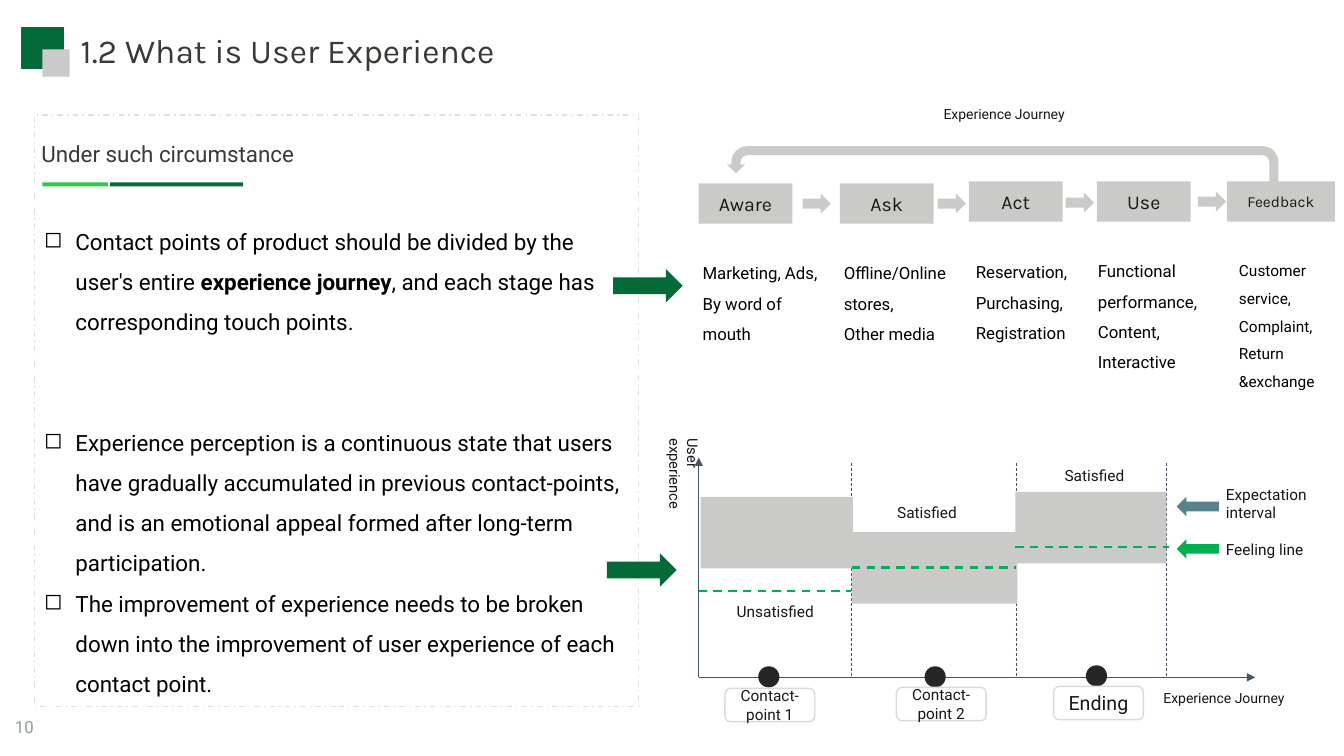
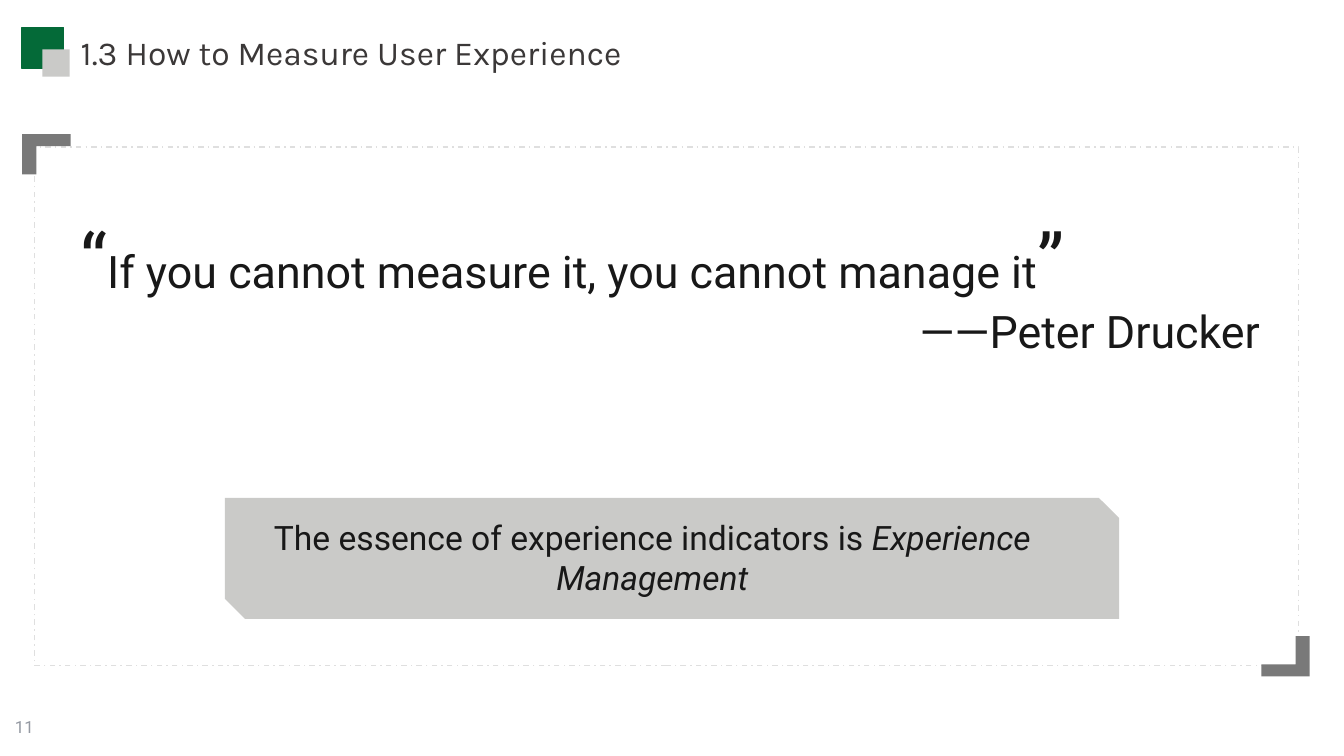
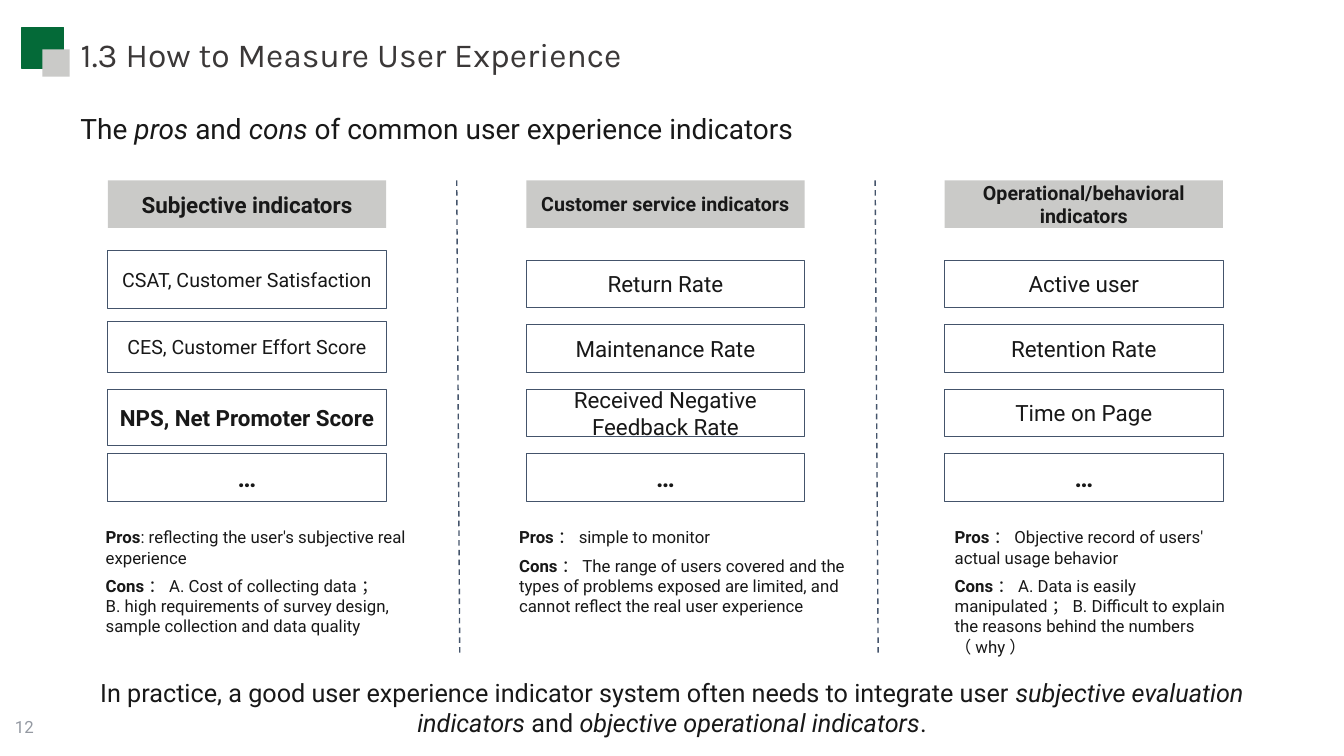
from lxml.etree import SubElement
from pptx import Presentation
from pptx.dml.color import RGBColor
from pptx.enum.dml import MSO_LINE
from pptx.enum.shapes import MSO_CONNECTOR, MSO_SHAPE
from pptx.enum.text import MSO_ANCHOR, MSO_AUTO_SIZE, PP_ALIGN
from pptx.oxml.ns import qn
from pptx.util import Emu, Pt

PX = 9144

GREEN = RGBColor(0x04, 0x6A, 0x38)
LIGHT_GREEN = RGBColor(0x2D, 0xC8, 0x4D)
LINE_GREEN = RGBColor(0x00, 0xB0, 0x50)
TEAL = RGBColor(0x56, 0x82, 0x8B)
SILVER = RGBColor(0xCA, 0xCA, 0xC8)
PALE = RGBColor(0xDF, 0xDF, 0xDF)
TAG_EDGE = RGBColor(0xDA, 0xDA, 0xDA)
CORNER_GRAY = RGBColor(0x79, 0x79, 0x79)
NUMBER_GRAY = RGBColor(0x94, 0x99, 0xA2)
SLATE = RGBColor(0x44, 0x54, 0x6B)
CHARCOAL = RGBColor(0x3B, 0x38, 0x38)
DOT = RGBColor(0x26, 0x26, 0x26)
INK = RGBColor(0x18, 0x18, 0x18)
BLACK = RGBColor(0x00, 0x00, 0x00)

TITLE_FONT, BODY_FONT = "Karla", "Roboto"
CENTER, RIGHT = PP_ALIGN.CENTER, PP_ALIGN.RIGHT
BOLD, ITALIC = {"bold": True}, {"italic": True}
FRAME_EDGE = (PALE, 1, MSO_LINE.DASH_DOT)

POINTS = [
    ["Contact points of product should be divided by the user's entire ",
     ("experience journey", BOLD),
     ", and each stage has corresponding touch points."],
    ["Experience perception is a continuous state that users have gradually "
     "accumulated in previous contact-points, and is an emotional appeal "
     "formed after long-term participation."],
    ["The improvement of experience needs to be broken down into the "
     "improvement of user experience of each contact point."],
]
POINT_GAPS = [0, 57, 0]

STAGES = [
    ("Aware", (693, 182, 93, 40), 14, (687, 246, 138, 159), 12,
     ["Marketing, Ads,", "By word of mouth"]),
    ("Ask", (833, 182, 93, 40), 14, (827, 246, 138, 148), 12,
     ["Offline/Online stores,", "Other media"]),
    ("Act", (961, 180, 93, 40), 14, (958, 245, 138, 98), 12,
     ["Reservation,", "Purchasing,", "Registration"]),
    ("Use", (1088, 180, 93, 40), 14, (1079, 244, 138, 128), 12,
     ["Functional performance,", "Content,", "Interactive"]),
    ("Feedback", (1217, 180, 107, 40), 11, (1219, 245, 117, 202), 11,
     ["Customer service,", "Complaint,", "Return &exchange"]),
]
STAGE_ARROWS = [(796, 192), (930, 192), (1057, 191), (1188, 190)]
POINT_ARROWS = [(608, 267), (602, 549)]

CONTACTS = [
    {"name": "Contact-point 1", "size": 11, "tag": (719, 683), "dot": (752, 661),
     "band": (695, 493, 151, 71), "feeling": (693, 844, 586), "edge": 844,
     "mood": "Unsatisfied", "mood_place": (712, 592, 114, 29)},
    {"name": "Contact-point 2", "size": 11, "tag": (889, 682), "dot": (917, 661),
     "band": (845, 528, 164, 71), "feeling": (845, 1008, 563), "edge": 1008,
     "mood": "Satisfied", "mood_place": (873, 494, 93, 29)},
    {"name": "Ending", "size": 14, "tag": (1045, 681), "dot": (1077, 660),
     "band": (1007, 488, 150, 71), "feeling": (1007, 1159, 543), "edge": 1157,
     "mood": "Satisfied", "mood_place": (1039, 457, 93, 29)},
]
LEGEND = [
    (TEAL, 493, ["Expectation", "interval"], (1206, 476, 127, 47)),
    (LINE_GREEN, 535, ["Feeling line"], (1206, 531, 113, 29)),
]
JOURNEY_LABELS = [(926, 100, 194, 28), (1144, 679, 194, 28)]

QUOTE = [
    [("“", {"size": 54}), "If you cannot measure it, you cannot manage it",
     ("”", {"size": 54})],
    ["——Peter Drucker"],
]
ESSENCE = [["The essence of experience indicators is ",
            ("Experience Management", ITALIC)]]
CORNER = [(0, 0), (48, 0), (48, 12), (14, 12), (14, 40), (0, 40)]

SUBTITLE = [["The ", ("pros", ITALIC), " and ", ("cons", ITALIC),
             " of common user experience indicators"]]
CONCLUSION = [[
    "In practice, a good user experience indicator system often needs to "
    "integrate user ",
    ("subjective evaluation indicators ", ITALIC), "and ",
    ("objective operational indicators", ITALIC), "."]]
MORE = ("…", 18, True)
EVEN_ROWS = [(258 + 64 * row, 47) for row in range(4)]
INDICATORS = [
    {"heading": ("Subjective indicators", 16),
     "items": [("CSAT, Customer Satisfaction", 14, False),
               ("CES, Customer Effort Score", 14, False),
               ("NPS, Net Promoter Score", 16, True), MORE],
     "rows": [(248, 58), (319, 50), (386, 56), (450, 47)],
     "notes_place": (95, 518, 344, 154),
     "notes": [[("Pros", BOLD), ": reflecting the user's subjective real experience"],
               [("Cons", BOLD), "：A. Cost of collecting data；"],
               ["B. high requirements of survey design, sample collection "
                "and data quality"]]},
    {"heading": ("Customer service indicators", 14),
     "items": [("Return Rate", 16, False), ("Maintenance Rate", 16, False),
               ("Received Negative Feedback Rate", 16, False), MORE],
     "rows": EVEN_ROWS,
     "notes_place": (505, 518, 348, 130),
     "notes": [[("Pros", BOLD), "：simple to monitor"],
               [("Cons", BOLD), "：The range of users covered and the types of "
                "problems exposed are limited, and cannot reflect the real "
                "user experience"]]},
    {"heading": ("Operational/behavioral indicators", 14),
     "items": [("Active user", 16, False), ("Retention Rate", 16, False),
               ("Time on Page", 16, False), MORE],
     "rows": EVEN_ROWS,
     "notes_place": (937, 518, 288, 130),
     "notes": [[("Pros", BOLD), "：Objective record of users' actual usage behavior"],
               [("Cons", BOLD), "：A. Data is easily manipulated；B. Difficult to "
                "explain the reasons behind the numbers （why）"]]},
]
COLUMN_LEFT, COLUMN_STEP, COLUMN_WIDTH = 107, 415, 276


def to_emu(lengths):
    return [Emu(length * PX) for length in lengths]


def add_bullet(para):
    properties = para._p.get_or_add_pPr()
    properties.set("marL", str(31 * PX))
    properties.set("indent", str(-31 * PX))
    SubElement(properties, qn("a:buChar")).set("char", "◻")


def write(frame, paras, size, color=INK, font=BODY_FONT, align=PP_ALIGN.LEFT,
          spacing=None, anchor=MSO_ANCHOR.TOP, insets=(10, 5, 10, 5),
          wrap=True, bold=False, bulleted=False):
    frame.word_wrap = wrap
    frame.auto_size = MSO_AUTO_SIZE.NONE
    frame.vertical_anchor = anchor
    (frame.margin_left, frame.margin_top,
     frame.margin_right, frame.margin_bottom) = to_emu(insets)
    for index, spans in enumerate(paras):
        para = frame.add_paragraph() if index else frame.paragraphs[0]
        if bulleted:
            add_bullet(para)
        para.alignment = align
        if spacing:
            para.line_spacing = spacing
        for span in [spans] if isinstance(spans, str) else spans:
            text, style = (span, {}) if isinstance(span, str) else span
            run = para.add_run()
            run.text = text
            run.font.name = font
            run.font.size = Pt(style.get("size", size))
            run.font.color.rgb = color
            run.font.bold = style.get("bold", bold)
            run.font.italic = style.get("italic", False)


def add_text(page, place, paras, size, **style):
    box = page.shapes.add_textbox(*to_emu(place))
    write(box.text_frame, paras, size, **style)
    return box.text_frame


def set_line(line, color, width, dash=None):
    line.color.rgb = color
    line.width = Pt(width)
    if dash:
        line.dash_style = dash


def paint(shape, fill=None, outline=None):
    shape.shadow.inherit = False
    if fill is None:
        shape.fill.background()
    else:
        shape.fill.solid()
        shape.fill.fore_color.rgb = fill
    if outline:
        set_line(shape.line, *outline)
    else:
        shape.line.fill.background()


def add_box(page, place, fill=None, outline=None, kind=MSO_SHAPE.RECTANGLE):
    box = page.shapes.add_shape(kind, *to_emu(place))
    paint(box, fill, outline)
    return box


def add_label_box(page, place, label, size, fill=None, outline=None,
                  kind=MSO_SHAPE.RECTANGLE, **style):
    box = add_box(page, place, fill, outline, kind)
    write(box.text_frame, [label], size, align=CENTER,
          anchor=MSO_ANCHOR.MIDDLE, **style)


def add_line(page, ends, color, width, dash=None, arrow=False):
    connector = page.shapes.add_connector(MSO_CONNECTOR.STRAIGHT, *to_emu(ends))
    set_line(connector.line, color, width, dash)
    if arrow:
        SubElement(connector.line._get_or_add_ln(),
                   qn("a:tailEnd")).set("type", "triangle")
    SubElement(connector._element.spPr, qn("a:effectLst"))


def add_page(deck, title, title_place, number):
    page = deck.slides.add_slide(deck.slide_layouts[5])
    heading = page.shapes.title
    heading.left, heading.top, heading.width, heading.height = to_emu(title_place)
    write(heading.text_frame, [title], 24, CHARCOAL, TITLE_FONT)
    add_box(page, (22, 27, 41, 41), GREEN, (GREEN, 1))
    add_box(page, (42, 49, 27, 27), SILVER)
    add_text(page, (5, 701, 300, 40), [number], 12, color=NUMBER_GRAY,
             anchor=MSO_ANCHOR.MIDDLE)
    return page


def add_points(page):
    add_text(page, (34, 135, 317, 34), ["Under such circumstance"], 16,
             color=CHARCOAL, insets=(7, 4, 7, 4), wrap=False)
    add_box(page, (42, 181, 65, 4), LIGHT_GREEN)
    add_box(page, (109, 181, 132, 4), GREEN)
    add_box(page, (34, 114, 599, 587), outline=FRAME_EDGE)
    frame = add_text(page, (34, 208, 599, 491), POINTS, 16, color=BLACK,
                     spacing=1.5, bulleted=True)
    for para, gap in zip(frame.paragraphs, POINT_GAPS):
        para.space_before = Pt(gap)
    for left, top in POINT_ARROWS:
        add_box(page, (left, top, 69, 33), GREEN, kind=MSO_SHAPE.RIGHT_ARROW)


def add_journey(page):
    for name, place, size, notes_place, notes_size, notes in STAGES:
        add_label_box(page, place, name, size, SILVER, font=TITLE_FONT)
        add_text(page, notes_place, notes, notes_size, color=BLACK, spacing=1.5)
    for left, top in STAGE_ARROWS:
        add_box(page, (left, top, 28, 20), SILVER, kind=MSO_SHAPE.RIGHT_ARROW)
    loop = add_box(page, (721, 145, 547, 36), SILVER, kind=MSO_SHAPE.U_TURN_ARROW)
    loop._element.spPr.xfrm.set("flipH", "1")
    for place in JOURNEY_LABELS:
        add_text(page, place, ["Experience Journey"], 10)


def add_experience_graph(page):
    for end in [(693, 454), (1245, 672)]:
        add_line(page, (693, 672, *end), SLATE, 0.5, arrow=True)
    axis_label = add_text(page, (645, 425, 56, 106), ["User experience"], 10.5)
    axis_label._txBody.bodyPr.set("vert", "eaVert")
    for contact in CONTACTS:
        edge = contact["edge"]
        add_line(page, (edge, 459, edge, 671), SLATE, 0.5, MSO_LINE.DASH)
    for contact in CONTACTS:
        add_box(page, contact["band"], SILVER)
        start, end, level = contact["feeling"]
        add_line(page, (start, level, end, level), LINE_GREEN, 1.5, MSO_LINE.DASH)
        add_box(page, (*contact["dot"], 21, 21), DOT,
                kind=MSO_SHAPE.FLOWCHART_CONNECTOR)
        add_label_box(page, (*contact["tag"], 89, 33), contact["name"],
                      contact["size"], outline=(TAG_EDGE, 1),
                      kind=MSO_SHAPE.ROUNDED_RECTANGLE, insets=(0, 0, 0, 0))
        add_text(page, contact["mood_place"], [contact["mood"]], 11, align=CENTER)
    for color, top, label, place in LEGEND:
        pointer = add_box(page, (1167, top, 42, 19), color,
                          kind=MSO_SHAPE.RIGHT_ARROW)
        pointer.rotation = 180
        add_text(page, place, label, 11)


def add_corner(page, left, top, rotation):
    points = [(left + x, top + y) for x, y in CORNER]
    builder = page.shapes.build_freeform(*points[0], scale=PX)
    builder.add_line_segments(points[1:], close=True)
    corner = builder.convert_to_shape()
    paint(corner, CORNER_GRAY)
    corner.rotation = rotation


def add_quote(page):
    add_box(page, (223, 494, 887, 120), SILVER,
            kind=MSO_SHAPE.SNIP_2_DIAG_RECTANGLE)
    add_box(page, (34, 146, 1254, 514), outline=FRAME_EDGE)
    frame = add_text(page, (70, 206, 1190, 155), QUOTE, 32)
    frame.paragraphs[1].alignment = RIGHT
    add_text(page, (247, 508, 800, 91), ESSENCE, 24, align=CENTER)
    add_corner(page, 22, 133, 0)
    add_corner(page, 1251, 631, 180)


def add_indicators(page):
    add_text(page, (70, 106, 1034, 44), SUBTITLE, 20)
    for index, column in enumerate(INDICATORS):
        left = COLUMN_LEFT + COLUMN_STEP * index
        if index:
            add_line(page, (left - 69, 179, left - 66, 651), SLATE, 1, MSO_LINE.DASH)
        heading, size = column["heading"]
        add_label_box(page, (left, 179, COLUMN_WIDTH, 47), heading, size,
                      SILVER, bold=True)
        for (label, size, bold), (top, height) in zip(column["items"], column["rows"]):
            add_label_box(page, (left, top, COLUMN_WIDTH, height), label, size,
                          outline=(SLATE, 0.5), bold=bold)
        frame = add_text(page, column["notes_place"], column["notes"], 12)
        frame.paragraphs[0].space_after = Pt(6)
    add_text(page, (76, 667, 1181, 71), CONCLUSION, 18, align=CENTER)


def main():
    deck = Presentation()
    deck.slide_width, deck.slide_height = to_emu((1333, 750))
    page = add_page(deck, "1.2 What is User Experience", (70, 25, 563, 58), "10")
    add_points(page)
    add_journey(page)
    add_experience_graph(page)
    measure_title = "1.3 How to Measure User Experience"
    add_quote(add_page(deck, measure_title, (70, 27, 1034, 106), "11"))
    add_indicators(add_page(deck, measure_title, (70, 29, 1034, 106), "12"))
    deck.save("out.pptx")


if __name__ == "__main__":
    main()
